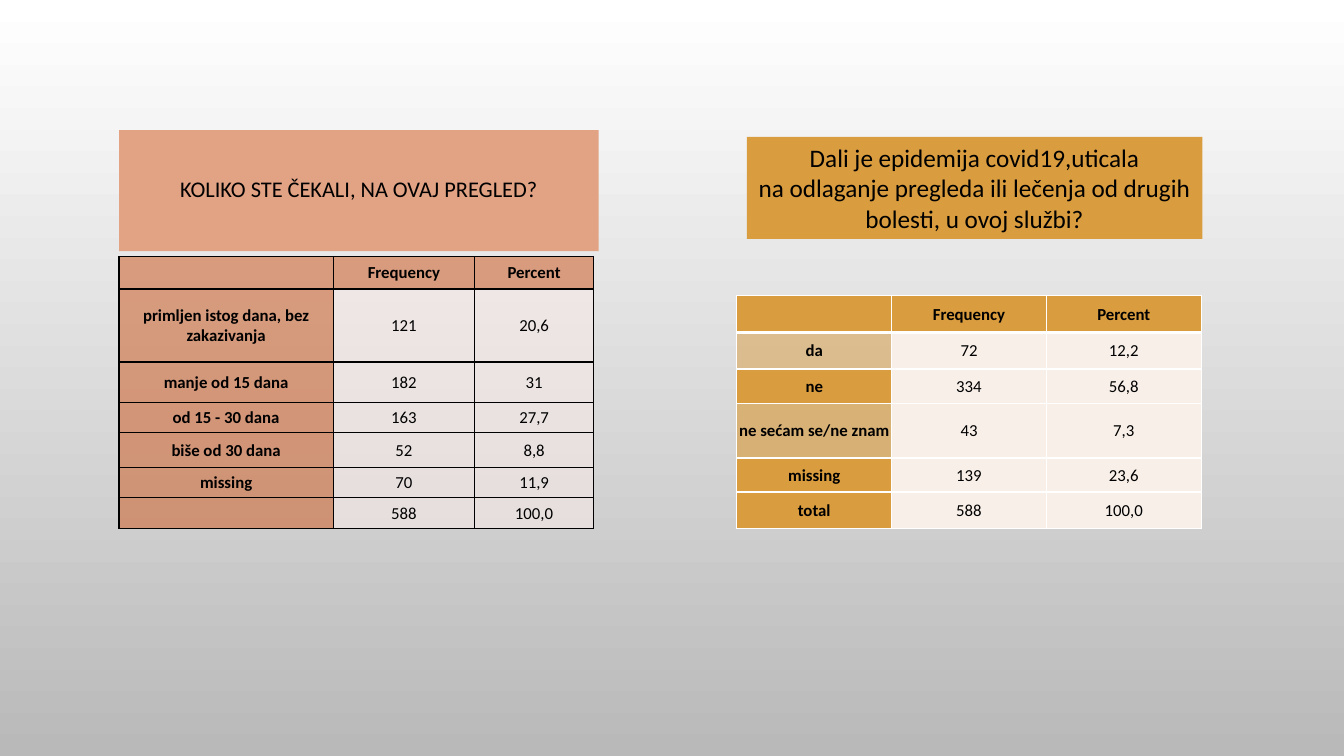
from lxml import etree
from pptx import Presentation
from pptx.dml.color import RGBColor
from pptx.enum.shapes import MSO_SHAPE
from pptx.enum.text import MSO_ANCHOR, PP_ALIGN
from pptx.oxml.ns import qn
from pptx.util import Cm, Pt

RECT = MSO_SHAPE.RECTANGLE
MIDDLE = MSO_ANCHOR.MIDDLE
CENTER = PP_ALIGN.CENTER

HUES = {
    "black": "000000", "white": "FFFFFF", "grey": "B9B9B9",
    "peach": "E2A385", "rust": "CE6633", "blush": "F6EAE8",
    "gold": "D99C3F", "cream": "F8EFE8",
}
INSETS = {"margin_left": Cm(0.02), "margin_right": Cm(0.02),
          "margin_top": Cm(0.02), "margin_bottom": 0,
          "vertical_anchor": MIDDLE}
PLAIN = {"first_row": False, "horz_banding": False}

WAIT = [
    ("", "Frequency", "Percent"),
    ("primljen istog dana, bez zakazivanja", "121", "20,6"),
    ("manje od 15 dana", "182", "31"),
    ("od 15 - 30 dana", "163", "27,7"),
    ("biše od 30 dana", "52", "8,8"),
    ("missing", "70", "11,9"),
    ("", "588", "100,0"),
]
DELAY = [
    ("", "Frequency", "Percent"),
    ("da", "72", "12,2"),
    ("ne", "334", "56,8"),
    ("ne sećam se/ne znam", "43", "7,3"),
    ("missing", "139", "23,6"),
    ("total", "588", "100,0"),
]


def tint(name):
    return RGBColor.from_string(HUES[name])


def apply(item, values):
    for key, value in values.items():
        setattr(item, key, value)


def write(para, text, size, bold=False):
    para.alignment = CENTER
    run = para.add_run()
    run.text = text
    apply(run.font, {"name": "Calibri", "size": Pt(size), "bold": bold})
    run.font.color.rgb = tint("black")


def paint(cell, hue, alpha=100):
    """Fill a cell, with its opacity in percent."""
    cell.fill.solid()
    cell.fill.fore_color.rgb = tint(hue)
    if alpha < 100:
        color = cell._tc.tcPr.find(".//" + qn("a:srgbClr"))
        etree.SubElement(color, qn("a:alpha"), val=str(alpha * 1000))


def edge(cell, hue, base):
    """Draw 1 pt borders; the bottom one is base points wide."""
    props = cell._tc.get_or_add_tcPr()
    for spot, (side, width) in enumerate(zip("LRTB", (1, 1, 1, base))):
        line = etree.Element(qn("a:ln" + side), w=str(Pt(width)))
        fill = etree.SubElement(line, qn("a:solidFill"))
        etree.SubElement(fill, qn("a:srgbClr"), val=HUES[hue])
        props.insert(spot, line)


def banner(slide, box, hue, lines, size, pitch=None):
    shape = slide.shapes.add_shape(RECT, *map(Cm, box))
    shape.shadow.inherit = False
    shape.fill.solid()
    shape.fill.fore_color.rgb = tint(hue)
    shape.line.fill.background()
    frame = shape.text_frame
    apply(frame, {"word_wrap": True, "vertical_anchor": MIDDLE})
    for index, text in enumerate(lines):
        para = frame.add_paragraph() if index else frame.paragraphs[0]
        para.line_spacing = pitch
        write(para, text, size)


def grid(slide, spot, cols, rows, data, look):
    """Table whose first row and column take the head colour."""
    size = sum(cols), sum(rows)
    frame = slide.shapes.add_table(len(rows), len(cols), *map(Cm, spot + size))
    table = frame.table
    apply(table, PLAIN)
    for col, width in zip(table.columns, cols):
        col.width = Cm(width)
    for row, height in zip(table.rows, rows):
        row.height = Cm(height)
    for r, texts in enumerate(data):
        for c, text in enumerate(texts):
            cell = table.cell(r, c)
            apply(cell, INSETS)
            head = r == 0 or c == 0
            write(cell.text_frame.paragraphs[0], text, 12, head)
            if head:
                paint(cell, look["head"], look["fade"].get(r, look["alpha"]))
            else:
                paint(cell, look["body"], look["alpha"])
            edge(cell, look["edge"], look["base"] if r == 0 else 1)


def wait(slide, x, y):
    banner(slide, (x, y, 12.09, 3.05), "peach",
           ["KOLIKO STE ČEKALI, NA OVAJ PREGLED?"], 16, 0.9)
    look = {"head": "rust", "body": "blush", "edge": "black",
            "alpha": 58, "fade": {}, "base": 1}
    grid(slide, (x, y + 3.18), (5.4, 3.56, 3),
         (0.82, 1.84, 1.02, 0.76, 0.88, 0.76, 0.78), WAIT, look)


def delay(slide, x, y):
    banner(slide, (x + 0.25, y, 11.48, 2.57), "gold",
           ["Dali je epidemija covid19,uticala",
            "na odlaganje pregleda ili lečenja od drugih bolesti, "
            "u ovoj službi?"], 18)
    look = {"head": "gold", "body": "cream", "edge": "white",
            "alpha": 100, "fade": {1: 50, 3: 64}, "base": 3}
    grid(slide, (x, y + 3.99), (3.9,) * 3,
         (0.94, 0.92, 0.86, 1.38, 0.86, 0.91), DELAY, look)


def backdrop(slide):
    fill = slide.background.fill
    fill.gradient()
    fill.gradient_angle = 270
    for stop, hue in zip(fill.gradient_stops, ("white", "grey")):
        stop.color.rgb = tint(hue)


def main():
    deck = Presentation()
    apply(deck, {"slide_width": Cm(33.87), "slide_height": Cm(19.05)})
    slide = deck.slides.add_slide(deck.slide_layouts[6])
    backdrop(slide)
    wait(slide, 3, 3.28)
    delay(slide, 18.57, 3.45)
    deck.save("out.pptx")


if __name__ == "__main__":
    main()
